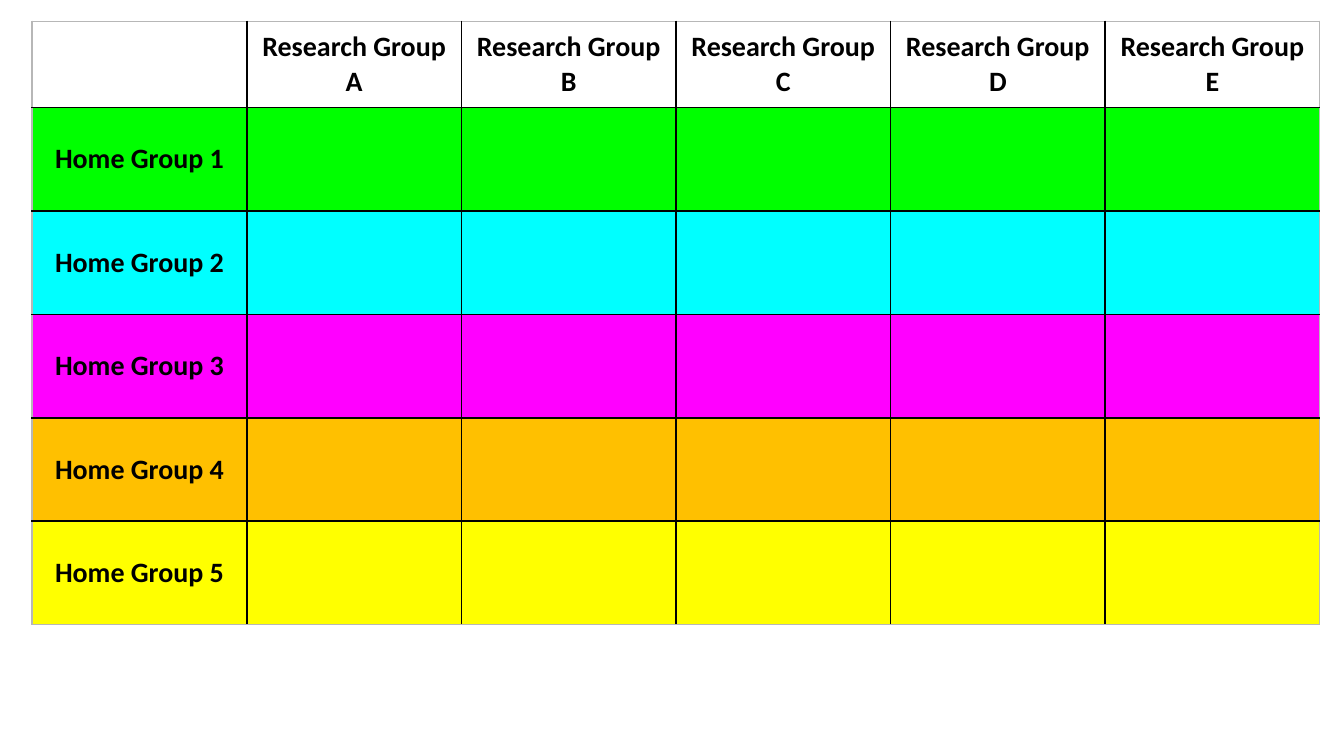
from lxml.etree import SubElement
from pptx import Presentation
from pptx.dml.color import RGBColor
from pptx.enum.text import MSO_ANCHOR as Anchor, PP_ALIGN as Align
from pptx.oxml.ns import qn
from pptx.util import Inches, Pt

BLACK = RGBColor(0x00, 0x00, 0x00)
GREY = RGBColor(0xB7, 0xB7, 0xB7)
WHITE = RGBColor(0xFF, 0xFF, 0xFF)
GREEN = RGBColor(0x00, 0xFF, 0x00)
CYAN = RGBColor(0x00, 0xFF, 0xFF)
PINK = RGBColor(0xFF, 0x00, 0xFF)
ORANGE = RGBColor(0xFF, 0xC0, 0x00)
YELLOW = RGBColor(0xFF, 0xFF, 0x00)

FILLS = [WHITE, GREEN, CYAN, PINK, ORANGE, YELLOW]
HEADS = [""] + [f"Research Group {c}" for c in "ABCDE"]
HOMES = [""] + [f"Home Group {n}" for n in range(1, 6)]


def add_edge(cell, side, color):
    line = SubElement(cell._tc.get_or_add_tcPr(), qn(f"a:ln{side}"), w=str(Pt(1)))
    fill = SubElement(line, qn("a:solidFill"))
    SubElement(fill, qn("a:srgbClr"), val=str(color))


prs = Presentation()
prs.slide_width, prs.slide_height = Inches(10), Inches(10 * 9 / 16)
slide = prs.slides.add_slide(prs.slide_layouts[6])

rows, cols = len(HOMES), len(HEADS)
frame = slide.shapes.add_table(
    rows, cols, Inches(0.24), Inches(0.16), Inches(9.58), Inches(4.5))
table = frame.table
table.first_row = table.horz_banding = False
for col in table.columns:
    col.width = Inches(9.58 / cols)
for r, row in enumerate(table.rows):
    row.height = Inches(0.77 if r else 0.64)
    for c, cell in enumerate(row.cells):
        outer = {"L": c == 0, "R": c == cols - 1, "T": r == 0, "B": r == rows - 1}
        for side, is_out in outer.items():
            add_edge(cell, side, GREY if is_out else BLACK)
        cell.fill.solid()
        cell.fill.fore_color.rgb = FILLS[r]
        cell.margin_left = cell.margin_right = Inches(0.08)
        cell.margin_top = cell.margin_bottom = Inches(0.04)
        cell.vertical_anchor = Anchor.MIDDLE
        cell.text = HEADS[c] if r == 0 else HOMES[r] if c == 0 else ""
        para = cell.text_frame.paragraphs[0]
        para.alignment = Align.CENTER
        para.font.name = "Calibri"
        para.font.size = Pt(15)
        para.font.bold = True
        para.font.color.rgb = BLACK

prs.save("out.pptx")
